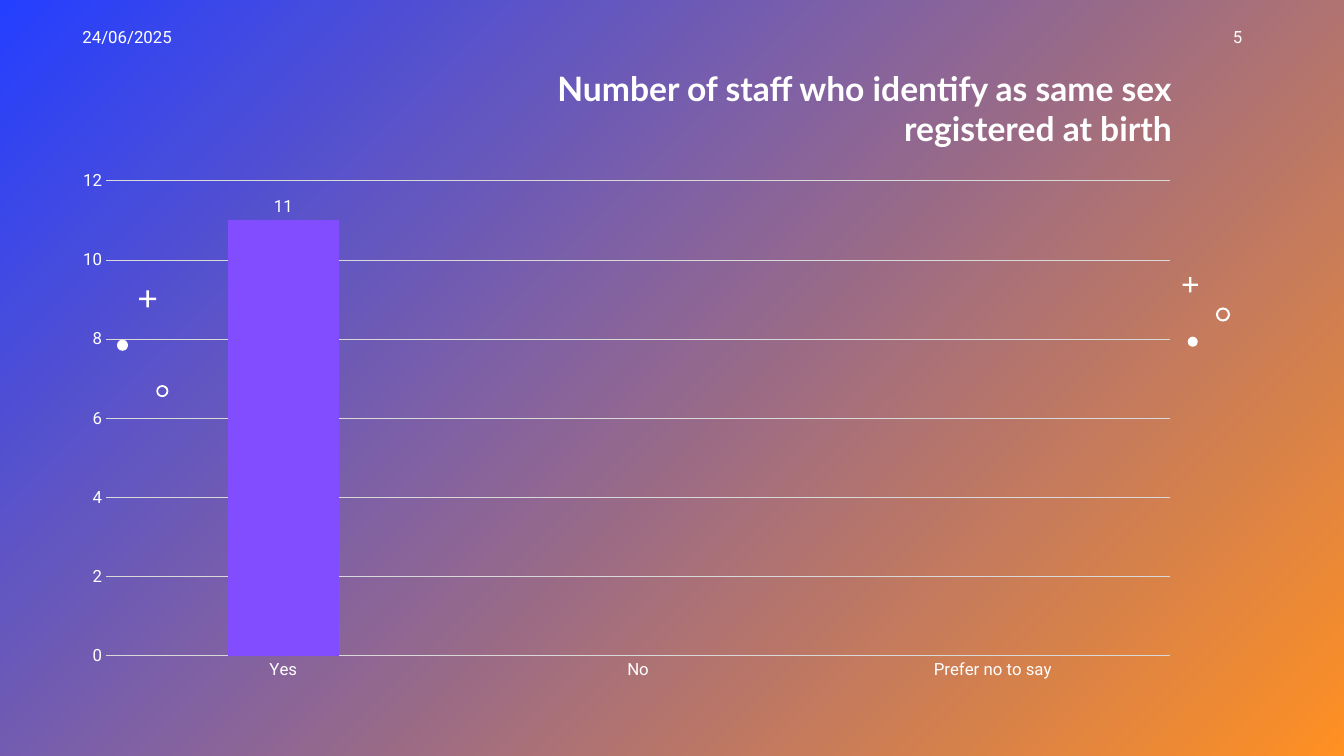
from pptx import Presentation
from pptx import util as u
from pptx.chart.data import CategoryChartData
from pptx.dml.color import RGBColor
from pptx.enum import chart as ch, shapes, text

WHITE = RGBColor(0xFF, 0xFF, 0xFF)
GRID_GREY = RGBColor(0xD9, 0xD9, 0xD9)
BAR_PURPLE = RGBColor(0x81, 0x4D, 0xFF)
BLUE = RGBColor(0x24, 0x3F, 0xFF)
ORANGE = RGBColor(0xFF, 0x90, 0x22)

BODY = {"name": "Roboto", "size": u.Pt(12), "bold": False}
HEADING = {"name": "Lato", "size": u.Pt(24), "bold": True}


class StaffSlide:
    def __init__(self, deck):
        self.slide = deck.slides.add_slide(deck.slide_layouts[6])

    def style(self, font, formats):
        for key, value in formats.items():
            setattr(font, key, value)
        font.color.rgb = WHITE

    def backdrop(self, start, end):
        fill = self.slide.background.fill
        fill.gradient()
        fill.gradient_angle = 315
        for stop, color in zip(fill.gradient_stops, (start, end)):
            stop.color.rgb = color

    def ornament(self, kind, left, top, size, adjust=None):
        mark = self.slide.shapes.add_shape(
            kind, *(u.Inches(n) for n in (left, top, size, size)))
        mark.shadow.inherit = False
        mark.fill.solid()
        mark.fill.fore_color.rgb = WHITE
        mark.line.fill.background()
        if adjust is not None:
            mark.adjustments[0] = adjust

    def label(self, words, box, formats, align):
        frame = self.slide.shapes.add_textbox(*(u.Inches(n) for n in box)).text_frame
        frame.word_wrap = True
        paragraph = frame.paragraphs[0]
        paragraph.alignment = align
        run = paragraph.add_run()
        run.text = words
        self.style(run.font, formats)

    def grey_line(self, line):
        line.color.rgb = GRID_GREY
        line.width = u.Pt(0.75)

    def columns(self, categories, values, box):
        data = CategoryChartData()
        data.categories = categories
        data.add_series("Series 1", values)
        chart = self.slide.shapes.add_chart(
            ch.XL_CHART_TYPE.COLUMN_CLUSTERED, *(u.Inches(n) for n in box), data).chart
        self.style(chart.font, BODY)
        chart.has_legend = chart.has_title = False

        # Axes
        for axis in (chart.category_axis, chart.value_axis):
            axis.major_tick_mark = axis.minor_tick_mark = ch.XL_TICK_MARK.NONE
            self.style(axis.tick_labels.font, BODY)
        self.grey_line(chart.category_axis.format.line)
        scale = chart.value_axis
        scale.minimum_scale, scale.maximum_scale, scale.major_unit = 0, 12, 2
        scale.format.line.fill.background()
        self.grey_line(scale.major_gridlines.format.line)

        # Bars and their values
        plot = chart.plots[0]
        plot.gap_width, plot.overlap = 219, -27
        plot.vary_by_categories = False
        staff = plot.series[0]
        staff.format.fill.solid()
        staff.format.fill.fore_color.rgb = BAR_PURPLE
        staff.data_labels.show_value = True
        staff.data_labels.position = ch.XL_LABEL_POSITION.OUTSIDE_END
        self.style(staff.data_labels.font, BODY)


def main():
    deck = Presentation()
    deck.slide_width, deck.slide_height = u.Inches(13.33), u.Inches(7.5)
    page = StaffSlide(deck)
    page.backdrop(BLUE, ORANGE)

    # Ornaments on both sides
    kinds = shapes.MSO_SHAPE
    for left, top, size in ((11.78, 3.34, 0.1), (1.16, 3.37, 0.11)):
        page.ornament(kinds.OVAL, left, top, size)
    for left, top, size in ((11.73, 2.75, 0.15), (1.38, 2.88, 0.17)):
        page.ornament(kinds.CROSS, left, top, size, 0.43)
    for left, top, size in ((12.06, 3.05, 0.14), (1.55, 3.82, 0.12)):
        page.ornament(kinds.DONUT, left, top, size, 0.15)

    # Chart
    page.columns(("Yes", "No", "Prefer no to say"), (11, None, None),
                 (0.6, 1.59, 11.23, 5.26))

    # Date, page number and title
    align = text.PP_ALIGN
    page.label("24/06/2025", (0.72, 0.22, 3, 0.4), BODY, align.LEFT)
    page.label("5", (9.42, 0.22, 3, 0.4), BODY, align.RIGHT)
    page.label("Number of staff who identify as same sex registered at birth",
               (4, 0.62, 7.72, 0.91), HEADING, align.RIGHT)

    deck.save("out.pptx")


if __name__ == "__main__":
    main()
